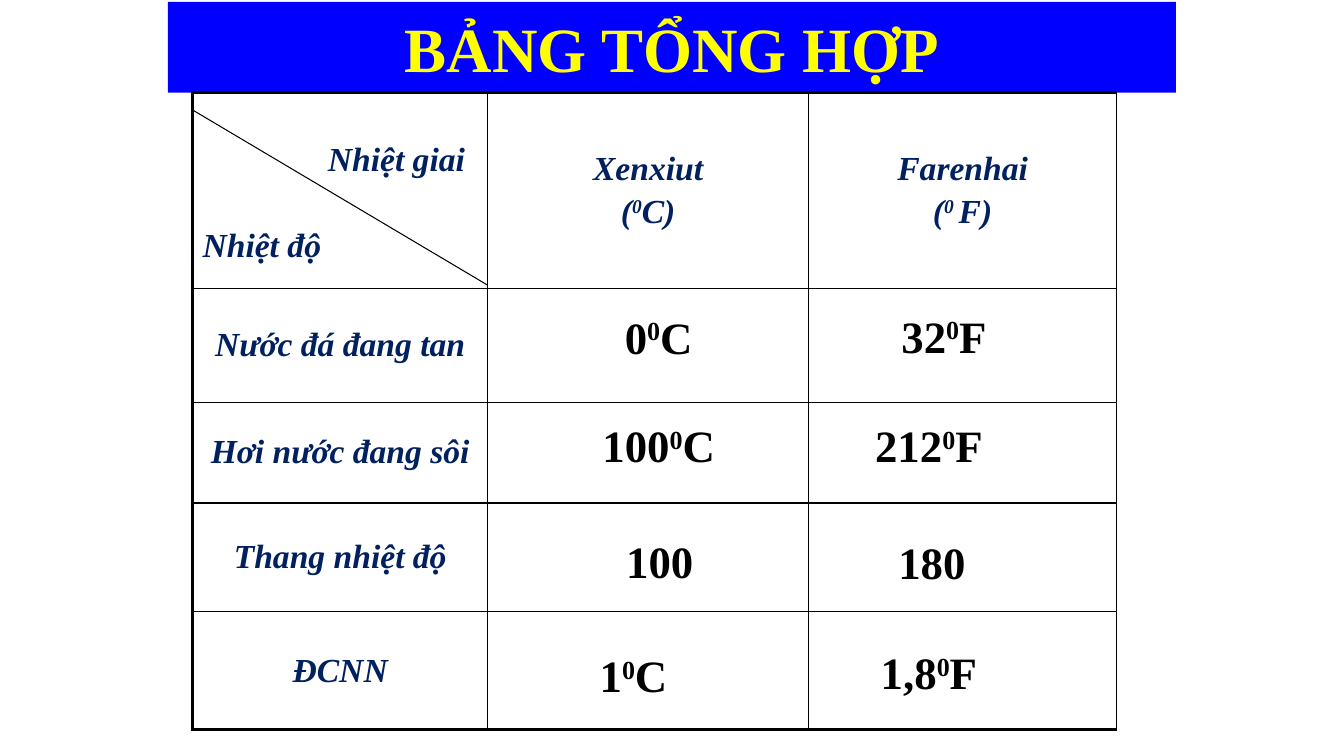
from dataclasses import dataclass

from lxml.etree import SubElement
from pptx import Presentation
from pptx.dml.color import RGBColor
from pptx.enum.shapes import MSO_CONNECTOR, MSO_SHAPE
from pptx.enum.text import MSO_ANCHOR, PP_ALIGN
from pptx.oxml import parse_xml
from pptx.oxml.ns import nsdecls, qn
from pptx.util import Pt


@dataclass(frozen=True)
class Theme:
    font: str = "Times New Roman"
    banner: str = "0000FF"
    title: str = "FFFF00"
    label: str = "002060"
    ink: str = "000000"
    title_size: int = 45
    label_size: int = 24
    value_size: int = 32
    thin: float = 1
    thick: float = 2.25
    diagonal: float = 0.75


THEME = Theme()
TITLE = {"size": Pt(THEME.title_size), "color": THEME.title, "bold": True}
LABEL = {"size": Pt(THEME.label_size), "color": THEME.label, "bold": True, "italic": True}
VALUE = {"size": Pt(THEME.value_size), "color": THEME.ink, "bold": True}

TABLE_LEFT, TABLE_TOP = 137.5, 66.2
COLUMN_WIDTHS = (211, 229, 220.3)
ROW_HEIGHTS = (139.7, 81.4, 72, 77.8, 84.2)
SCALES = (("Xenxiut", ("(", "0", "C)")), ("Farenhai", ("(", "0 ", "F)")))
ROW_LABELS = ("Nước đá đang tan", "Hơi nước đang sôi", "Thang nhiệt độ", "ĐCNN")
LABEL_GAP = 4
VALUE_WIDTH, VALUE_HEIGHT = 124.6, 59.8

# Left, top and text parts of each reading; every second part is raised.
READINGS = (
    (408.2, 210.2, ("0", "0", "C")),
    (612, 209.5, ("32", "0", "F")),
    (408.2, 288, ("100", "0", "C")),
    (601.2, 288, ("212", "0", "F")),
    (409, 370.8, ("100",)),
    (603.4, 371.5, ("180",)),
    (390.2, 452.2, ("1", "0", "C")),
    (601.2, 450, ("1,8", "0", "F")),
)


def apply_format(target, values):
    for attribute, value in values.items():
        setattr(target, attribute, value)


def write(paragraph, parts, style, **layout):
    """Add the parts as runs, raising every second one."""
    apply_format(paragraph, {"alignment": PP_ALIGN.CENTER, **layout})
    for position, part in enumerate(parts):
        run = paragraph.add_run()
        run.text = part
        font_values = {key: value for key, value in style.items() if key != "color"}
        apply_format(run.font, {"name": THEME.font, **font_values})
        run.font.color.rgb = RGBColor.from_string(style["color"])
        if position % 2:
            run.font._element.set("baseline", "30000")


def add_banner(slide, title):
    banner = slide.shapes.add_shape(MSO_SHAPE.RECTANGLE, Pt(120), Pt(1.4), Pt(720), Pt(64.8))
    banner.shadow.inherit = False
    banner.fill.solid()
    banner.fill.fore_color.rgb = RGBColor.from_string(THEME.banner)
    banner.line.fill.background()
    banner.text_frame.vertical_anchor = MSO_ANCHOR.MIDDLE
    write(banner.text_frame.paragraphs[0], (title,), TITLE)


def set_borders(cell, widths):
    """Draw the left, right, top and bottom borders, in that order."""
    properties = cell._tc.get_or_add_tcPr()
    for position, (side, width) in enumerate(zip("LRTB", widths)):
        border = parse_xml(
            f'<a:ln{side} {nsdecls("a")} w="{int(Pt(width))}"><a:solidFill>'
            f'<a:srgbClr val="{THEME.ink}"/></a:solidFill></a:ln{side}>'
        )
        properties.insert(position, border)


def fill_corner(cell):
    apply_format(cell, {"vertical_anchor": MSO_ANCHOR.TOP, "margin_top": Pt(34.6)})
    scale, temperature = cell.text_frame.paragraphs[0], cell.text_frame.add_paragraph()
    write(scale, ("Nhiệt giai",), LABEL, alignment=PP_ALIGN.LEFT)
    scale._p.get_or_add_pPr().set("marL", str(int(Pt(89.5))))
    write(temperature, ("Nhiệt độ",), LABEL, alignment=PP_ALIGN.LEFT, space_before=Pt(35))


def add_scale_table(slide):
    row_count, column_count = len(ROW_HEIGHTS), len(COLUMN_WIDTHS)
    table = slide.shapes.add_table(
        row_count, column_count, Pt(TABLE_LEFT), Pt(TABLE_TOP),
        Pt(sum(COLUMN_WIDTHS)), Pt(sum(ROW_HEIGHTS)),
    ).table
    apply_format(table, {"first_row": False, "horz_banding": False})
    for column, width in zip(table.columns, COLUMN_WIDTHS):
        column.width = Pt(width)
    for row, height in zip(table.rows, ROW_HEIGHTS):
        row.height = Pt(height)

    for row in range(row_count):
        for column in range(column_count):
            cell = table.cell(row, column)
            cell.vertical_anchor = MSO_ANCHOR.MIDDLE
            cell.fill.background()
            outer_edges = (column == 0, False, row == 0, row == row_count - 1)
            set_borders(cell, [THEME.thick if edge else THEME.thin for edge in outer_edges])

    fill_corner(table.cell(0, 0))
    for column, (scale, unit) in enumerate(SCALES, start=1):
        heading = table.cell(0, column).text_frame
        write(heading.paragraphs[0], (scale,), LABEL)
        write(heading.add_paragraph(), unit, LABEL, space_before=Pt(LABEL_GAP))
    for row, label in enumerate(ROW_LABELS, start=1):
        write(table.cell(row, 0).text_frame.paragraphs[0], (label,), LABEL)


def add_diagonal(slide):
    diagonal = slide.shapes.add_connector(
        MSO_CONNECTOR.STRAIGHT, Pt(TABLE_LEFT), Pt(78.5),
        Pt(TABLE_LEFT + COLUMN_WIDTHS[0]), Pt(203.8),
    )
    diagonal.line.width = Pt(THEME.diagonal)
    diagonal.line.color.rgb = RGBColor.from_string(THEME.ink)
    SubElement(diagonal._element.spPr, qn("a:effectLst"))


def add_reading(slide, left, top, parts):
    reading = slide.shapes.add_textbox(Pt(left), Pt(top), Pt(VALUE_WIDTH), Pt(VALUE_HEIGHT))
    apply_format(reading.text_frame, {"word_wrap": False, "vertical_anchor": MSO_ANCHOR.MIDDLE})
    write(reading.text_frame.paragraphs[0], parts, VALUE)


def main():
    presentation = Presentation()
    apply_format(presentation, {"slide_width": Pt(960), "slide_height": Pt(540)})
    slide = presentation.slides.add_slide(presentation.slide_layouts[6])
    add_banner(slide, "BẢNG TỔNG HỢP")
    add_scale_table(slide)
    add_diagonal(slide)
    for left, top, parts in READINGS:
        add_reading(slide, left, top, parts)
    presentation.save("out.pptx")


if __name__ == "__main__":
    main()
